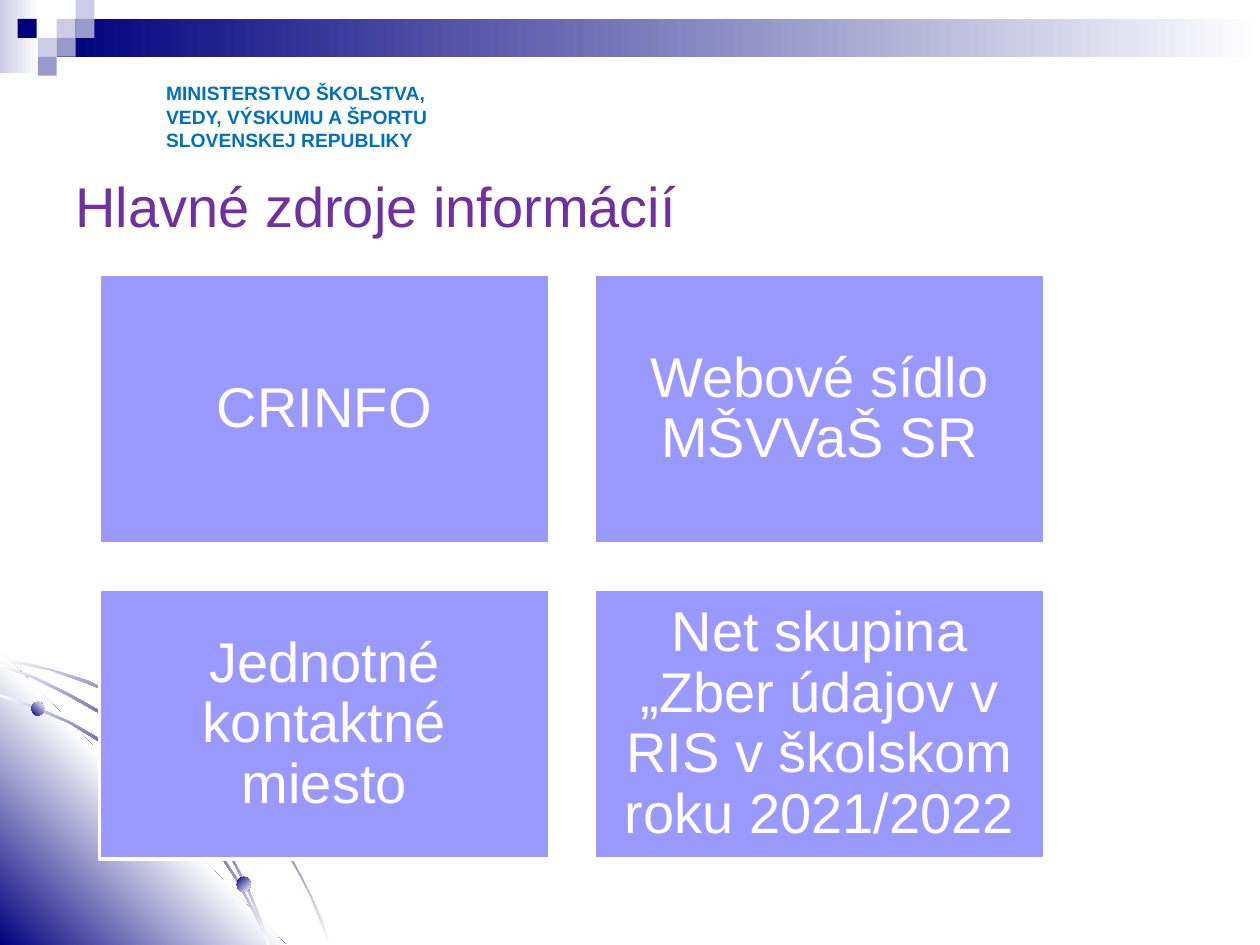
"""Build the slide on the main sources of information."""
import pptx
import pptx.dml.color
import pptx.enum.shapes
import pptx.enum.text
import pptx.oxml
import pptx.oxml.ns
import pptx.util

Inches = pptx.util.Inches
Kind = pptx.enum.shapes.MSO_SHAPE
Align = pptx.enum.text.PP_ALIGN
Anchor = pptx.enum.text.MSO_ANCHOR
Navy, Lilac, Mauve, White = "00007D", "CCCCE6", "9999CC", "FFFFFF"


def hue(code):
    return pptx.dml.color.RGBColor.from_string(code)


def paint(shape, tones, turn=0):
    shape.shadow.inherit = False
    shape.line.fill.background()
    if len(tones) == 1:
        shape.fill.solid()
        shape.fill.fore_color.rgb = hue(tones[0])
        return
    shape.fill.gradient()
    shape.fill.gradient_angle = (360 - turn) % 360
    stops = shape._element.spPr.find(".//" + pptx.oxml.ns.qn("a:gsLst"))
    for stop in list(stops):
        stops.remove(stop)
    for i, tone in enumerate(tones):
        place = 100000 * i // (len(tones) - 1)
        stops.append(pptx.oxml.parse_xml(
            f'<a:gs {pptx.oxml.ns.nsdecls("a")} pos="{place}">'
            f'<a:srgbClr val="{tone}"/></a:gs>'))


deck = pptx.Presentation()
deck.slide_width, deck.slide_height = Inches(10), Inches(7.5)
slide = deck.slides.add_slide(deck.slide_layouts[6])
shapes = slide.shapes

bars = [
    (0, 0, 0.31, 0.58, [Lilac, White]),
    (0.45, 0.15, 9.55, 0.3, [Navy, White]),
]
tiles = [
    (0.45, 0.15, Lilac), (0.6, 0, Lilac), (0.6, 0.15, Mauve), (0.3, 0.3, Lilac),
    (0.14, 0.15, Navy), (0.45, 0.3, Mauve), (0.3, 0.45, Mauve),
]
bars += [(x, y, 0.15, 0.15, [tone]) for x, y, tone in tiles]
for x, y, w, h, tones in bars:
    bar = shapes.add_shape(Kind.RECTANGLE, Inches(x), Inches(y), Inches(w), Inches(h))
    paint(bar, tones)

outer = [
    (0.4, 5.31), (0.2, 5.26), (0, 5.23), (0, 5.24), (0.2, 5.28), (0.4, 5.32),
    (0.68, 5.42), (0.95, 5.53), (1.22, 5.69), (1.47, 5.86), (1.7, 6.05),
    (1.91, 6.27), (2.1, 6.51), (2.28, 6.77), (2.38, 6.95), (2.47, 7.13),
    (2.54, 7.31), (2.61, 7.5), (2.62, 7.5), (2.56, 7.31), (2.48, 7.13),
    (2.39, 6.95), (2.29, 6.77), (2.12, 6.5), (1.92, 6.26), (1.7, 6.04),
    (1.48, 5.84), (1.23, 5.67), (0.96, 5.53), (0.69, 5.4),
]
wedge = [(2.27, 7.5), (0, 7.5), (0, 5.16)]
inner = [
    (2.01, 7.24), (2.07, 7.37), (2.12, 7.5), (2.14, 7.5), (2.09, 7.36),
    (2.02, 7.23), (1.88, 6.97), (1.71, 6.71), (1.51, 6.46), (1.3, 6.24),
    (1.07, 6.05), (0.82, 5.88), (0.56, 5.73), (0.29, 5.61), (0, 5.51),
    (0, 5.53), (0.27, 5.62), (0.55, 5.74), (0.81, 5.9), (1.06, 6.06),
    (1.29, 6.26), (1.5, 6.48), (1.7, 6.72), (1.87, 6.98),
]
middle = [
    (0, 5.27), (0, 5.29), (0.26, 5.38), (0.52, 5.51), (0.77, 5.65), (1, 5.83),
    (1.22, 6.02), (1.43, 6.23), (1.6, 6.46), (1.78, 6.71), (1.88, 6.9),
    (1.98, 7.1), (2.06, 7.3), (2.12, 7.49), (2.14, 7.49), (2.07, 7.29),
    (1.99, 7.09), (1.89, 6.89), (1.79, 6.7), (1.62, 6.44), (1.44, 6.22),
    (1.23, 6), (1.01, 5.81), (0.79, 5.64), (0.54, 5.5), (0.27, 5.37),
]
glow = [White, Navy, White]
curves = [
    (outer, glow, 45), (wedge, [Navy, White, Navy], 315),
    (inner, glow, 45), (middle, glow, 45),
]
for points, tones, turn in curves:
    spots = [(Inches(x), Inches(y)) for x, y in points]
    pen = shapes.build_freeform(*spots[0])
    pen.add_line_segments(spots[1:], close=True)
    paint(pen.convert_to_shape(), tones, turn)

for x, y, w, h, turn in [(0.25, 5.57, 0.1, 0.11, 315), (1.88, 6.96, 0.11, 0.12, 45)]:
    dot = shapes.add_shape(Kind.OVAL, Inches(x), Inches(y), Inches(w), Inches(h))
    paint(dot, [Navy, White], turn)

head = shapes.add_textbox(Inches(1.22), Inches(0.6), Inches(2.44), Inches(0.66))
title = shapes.add_textbox(Inches(0.5), Inches(1.31), Inches(9), Inches(0.63))
title.text_frame.vertical_anchor = Anchor.MIDDLE
texts = [
    (head, "MINISTERSTVO ŠKOLSTVA,\nVEDY, VÝSKUMU A ŠPORTU\nSLOVENSKEJ REPUBLIKY",
     "0070C0", {"size": pptx.util.Pt(11), "bold": True}, {}),
    (title, "Hlavné zdroje informácií", "7030A0", {"size": pptx.util.Pt(32)}, {}),
]

cards = [
    "CRINFO", "Webové sídlo MŠVVaŠ SR", "Jednotné kontaktné miesto",
    "Net skupina „Zber údajov v RIS v školskom roku 2021/2022",
]
inset = Inches(0.13)
frame = {
    "vertical_anchor": Anchor.MIDDLE, "margin_left": inset, "margin_right": inset,
    "margin_top": inset, "margin_bottom": inset,
}
for i, words in enumerate(cards):
    row, col = divmod(i, 2)
    card = shapes.add_shape(Kind.RECTANGLE, Inches(0.79 + 3.93 * col),
                            Inches(2.18 + 2.5 * row), Inches(3.57), Inches(2.14))
    paint(card, ["9999FF"])
    card.line.color.rgb = hue(White)
    card.line.width = pptx.util.Pt(2)
    for name, value in frame.items():
        setattr(card.text_frame, name, value)
    texts.append((card, words, White, {"size": pptx.util.Pt(32)},
                  {"alignment": Align.CENTER, "line_spacing": 0.9}))

for shape, words, tone, face, layout in texts:
    shape.text_frame.word_wrap = True
    shape.text_frame.text = words
    for para in shape.text_frame.paragraphs:
        for name, value in layout.items():
            setattr(para, name, value)
        for run in para.runs:
            for name, value in {"name": "Arial", **face}.items():
                setattr(run.font, name, value)
            run.font.color.rgb = hue(tone)

deck.save("out.pptx")
